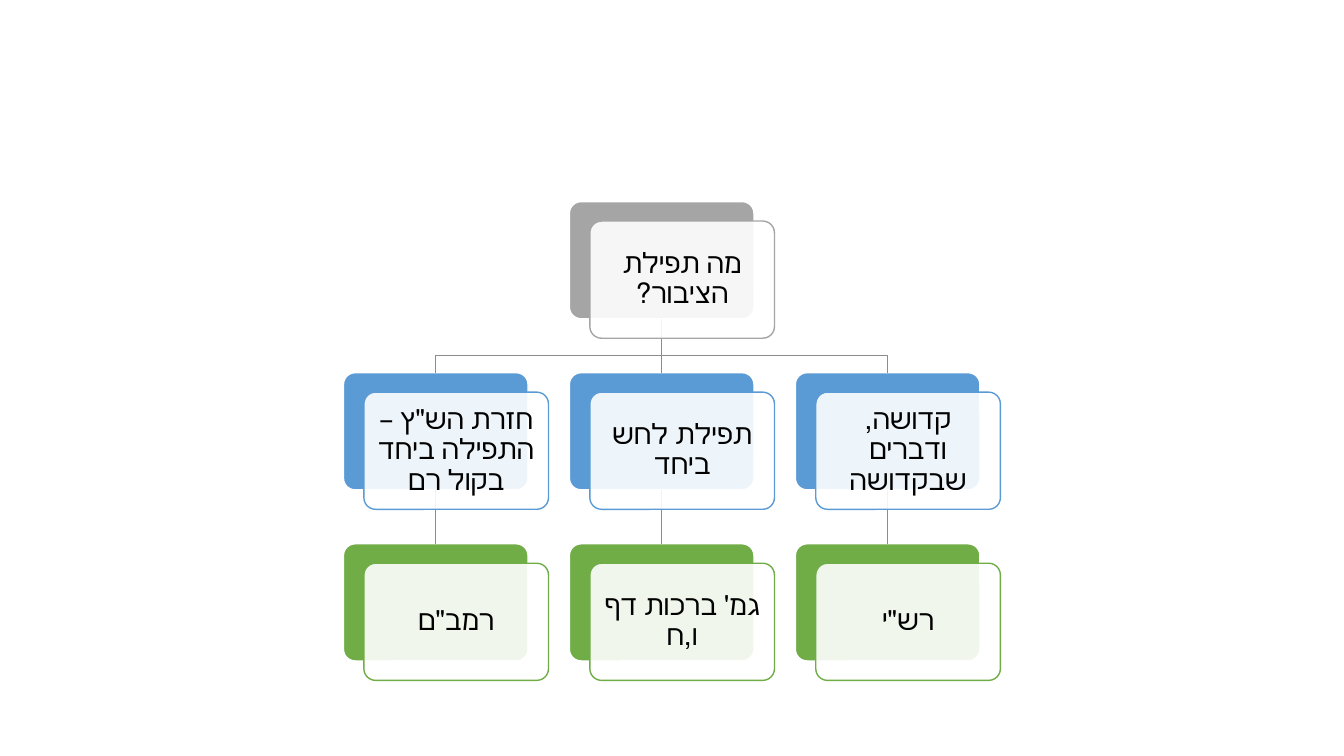
from dataclasses import dataclass

from lxml.etree import SubElement
from pptx import Presentation
from pptx.dml.color import RGBColor
from pptx.enum.lang import MSO_LANGUAGE_ID
from pptx.enum.shapes import MSO_CONNECTOR, MSO_SHAPE
from pptx.enum.text import MSO_ANCHOR, PP_ALIGN
from pptx.oxml.ns import qn
from pptx.shapes.autoshape import Shape
from pptx.shapes.connector import Connector
from pptx.shapes.shapetree import SlideShapes
from pptx.util import Pt


@dataclass(frozen=True)
class Theme:
    font: str = "Calibri"
    size: float = 20
    stroke: float = 1
    thin: float = 0.5
    text: str = "000000"
    paper: str = "FFFFFF"
    link: str = "8C8C8C"
    levels: tuple[str, ...] = ("A5A5A5", "5B9BD5", "70AD47")


@dataclass(frozen=True)
class Card:
    row: int
    col: int
    text: str

    @property
    def left(self) -> float:
        return LEFT + self.col * STEP_X

    @property
    def top(self) -> float:
        return TOP + self.row * STEP_Y

    @property
    def mid(self) -> float:
        return self.left + WIDTH / 2

    @property
    def color(self) -> str:
        return THEME.levels[self.row]


THEME = Theme()
LEFT, TOP = 245.3, 144
WIDTH, HEIGHT = 131.9, 83.7
STEP_X, STEP_Y = 161.4, 122.2
SHIFT_X, SHIFT_Y = 14.6, 13.9
BEND = 26.4
INSET = 5.6

ROOT = Card(0, 1, "מה תפילת הציבור?")
VIEWS = [
    Card(1, 2, "קדושה, ודברים שבקדושה"),
    Card(1, 1, "תפילת לחש ביחד"),
    Card(1, 0, 'חזרת הש"ץ – התפילה ביחד בקול רם'),
]
SOURCES = [
    Card(2, 2, 'רש"י'),
    Card(2, 1, "גמ' ברכות דף ו,ח"),
    Card(2, 0, 'רמב"ם'),
]


def set_line(shape: Shape | Connector, color: str, width: float) -> None:
    shape.line.color.rgb = RGBColor.from_string(color)
    shape.line.width = Pt(width)


def add_box(shapes: SlideShapes, left: float, top: float, fill: str, line: str) -> Shape:
    box = shapes.add_shape(
        MSO_SHAPE.ROUNDED_RECTANGLE, Pt(left), Pt(top), Pt(WIDTH), Pt(HEIGHT)
    )
    box.adjustments[0] = 0.1
    box.shadow.inherit = False
    box.fill.solid()
    box.fill.fore_color.rgb = RGBColor.from_string(fill)
    set_line(box, line, THEME.stroke)
    return box


def add_back(shapes: SlideShapes, card: Card) -> Shape:
    return add_box(shapes, card.left, card.top, card.color, THEME.paper)


def add_front(shapes: SlideShapes, card: Card) -> None:
    """Add the translucent, shifted panel that carries the card's text."""
    box = add_box(
        shapes, card.left + SHIFT_X, card.top + SHIFT_Y, THEME.paper, card.color
    )
    tint = box.fill._xPr.find(qn("a:solidFill"))[0]
    SubElement(tint, qn("a:alpha"), val="90000")

    frame = box.text_frame
    frame.word_wrap = True
    frame.vertical_anchor = MSO_ANCHOR.MIDDLE
    for side in ("left", "top", "right", "bottom"):
        setattr(frame, f"margin_{side}", Pt(INSET))

    para = frame.paragraphs[0]
    style = {"alignment": PP_ALIGN.CENTER, "line_spacing": 0.9, "space_after": Pt(7)}
    for name, value in style.items():
        setattr(para, name, value)
    para._p.get_or_add_pPr().set("rtl", "1")

    run = para.add_run()
    run.text = card.text
    face = {
        "name": THEME.font,
        "size": Pt(THEME.size),
        "language_id": MSO_LANGUAGE_ID.HEBREW,
    }
    for name, value in face.items():
        setattr(run.font, name, value)
    run.font.color.rgb = RGBColor.from_string(THEME.text)


def add_link(shapes: SlideShapes, backs: dict[Card, Shape], start: Card, end: Card) -> None:
    """Join two cards, straight within a column and bent across columns."""
    low = start.top + HEIGHT
    if start.col == end.col:
        link = shapes.add_connector(
            MSO_CONNECTOR.STRAIGHT, Pt(start.mid), Pt(low), Pt(end.mid), Pt(end.top)
        )
        link.begin_connect(backs[start], 2)
        link.end_connect(backs[end], 0)
        SubElement(link._element.spPr, qn("a:effectLst"))
    else:
        turn = low + BEND
        points = [(start.mid, turn), (end.mid, turn), (end.mid, end.top)]
        route = shapes.build_freeform(Pt(start.mid), Pt(low))
        route.add_line_segments([(Pt(x), Pt(y)) for x, y in points], close=False)
        link = route.convert_to_shape()
        link.fill.background()
        link.shadow.inherit = False
    set_line(link, THEME.link, THEME.thin)


def main() -> None:
    deck = Presentation()
    deck.slide_width, deck.slide_height = Pt(960), Pt(540)
    shapes = deck.slides.add_slide(deck.slide_layouts[6]).shapes

    cards = [ROOT, *VIEWS, *SOURCES]
    backs = {card: add_back(shapes, card) for card in cards}
    for view, source in zip(VIEWS, SOURCES):
        add_link(shapes, backs, ROOT, view)
        add_link(shapes, backs, view, source)
    for card in cards:
        add_front(shapes, card)

    deck.save("out.pptx")


if __name__ == "__main__":
    main()
